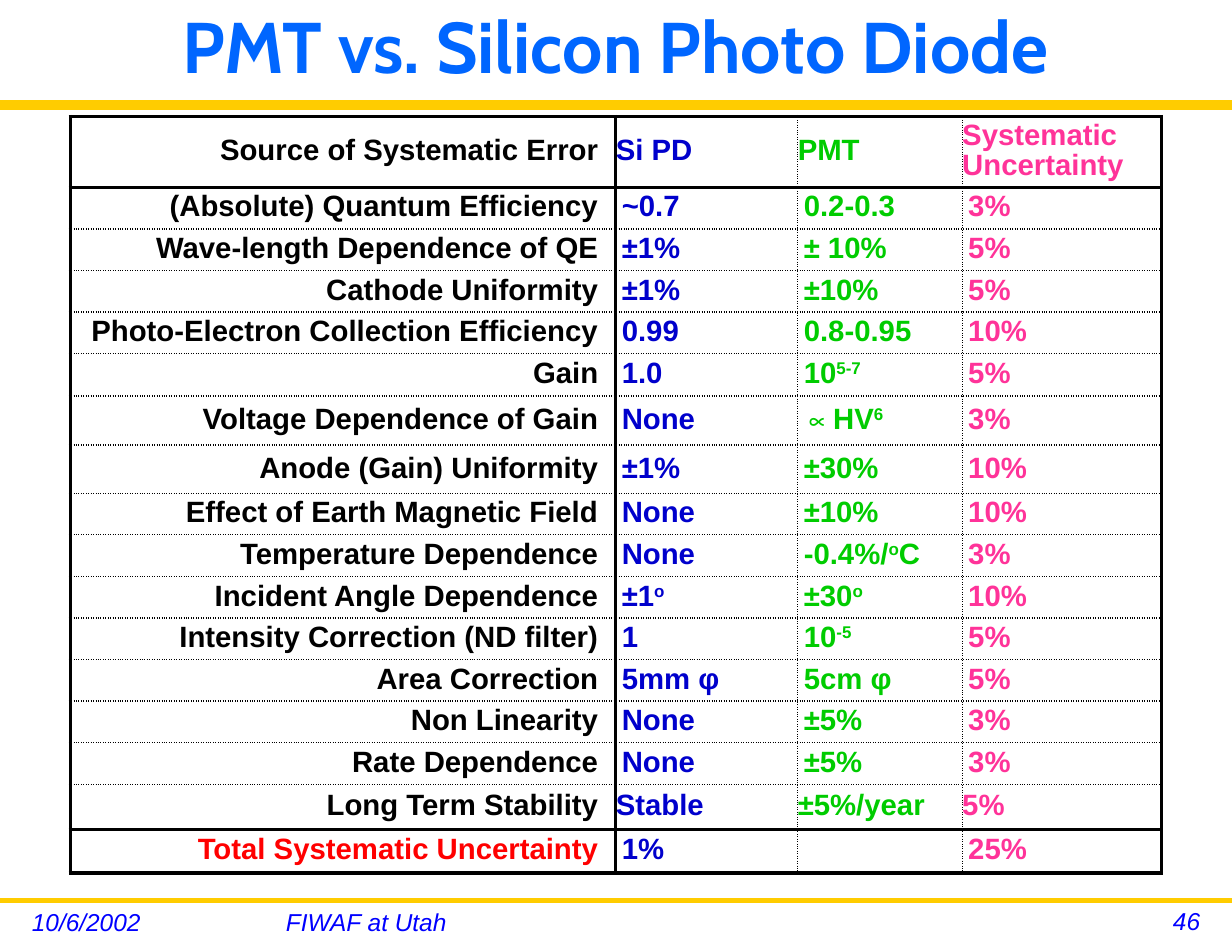
import pptx
import pptx.util
import pptx.dml.color
import pptx.enum.shapes
import pptx.enum.text
import lxml.etree
import pptx.oxml.ns

Cm = pptx.util.Cm
Pt = pptx.util.Pt
ALIGN = pptx.enum.text.PP_ALIGN
ANCHOR = pptx.enum.text.MSO_ANCHOR
qn = pptx.oxml.ns.qn

COLORS = {
    "gold": "FFCC00", "title": "0066FF", "footer": "0000FF", "black": "000000",
    "diode": "0000CC", "pmt": "00CC00", "pink": "FF3399", "red": "FF0000",
}


def write_text(para, text, color, align, spacing, font):
    para.alignment = align
    para.line_spacing = spacing
    for index, part in enumerate(text.split("^")):
        if not part:
            continue
        span = para.add_run()
        span.text = part
        for name, value in font.items():
            setattr(span.font, name, value)
        span.font.color.rgb = pptx.dml.color.RGBColor.from_string(COLORS[color])
        if index % 2:
            span._r.get_or_add_rPr().set("baseline", "30000")


def draw_border(cell, side, solid):
    line = lxml.etree.SubElement(cell._tc.get_or_add_tcPr(), qn(f"a:ln{side}"))
    line.set("w", str(Pt(2.25 if solid else 1)))
    fill = lxml.etree.SubElement(line, qn("a:solidFill"))
    lxml.etree.SubElement(fill, qn("a:srgbClr")).set("val", COLORS["black"])
    dash = lxml.etree.SubElement(line, qn("a:prstDash"))
    dash.set("val", "solid" if solid else "sysDot")


deck = pptx.Presentation()
deck.slide_width = Cm(26.67)
deck.slide_height = Cm(20.32)
page = deck.slides.add_slide(deck.slide_layouts[6])

for top, weight in [(2.28, 6), (19.48, 3)]:
    rule = page.shapes.add_connector(
        pptx.enum.shapes.MSO_CONNECTOR.STRAIGHT, 0, Cm(top), deck.slide_width, Cm(top))
    rule.line.color.rgb = pptx.dml.color.RGBColor.from_string(COLORS["gold"])
    rule.line.width = Pt(weight)
    lxml.etree.SubElement(rule._element.spPr, qn("a:effectLst"))

title_font = {"name": "Cabin", "size": Pt(44), "bold": True}
footer_font = {"name": "Arial", "size": Pt(15), "italic": True}
labels = [
    ("PMT vs. Silicon Photo Diode", 0.41, 0, 25.83, 2.29, "title",
     ALIGN.CENTER, ANCHOR.MIDDLE, 0.8, title_font),
    ("10/6/2002", 0.43, 19.5, 5.28, 0.82, "footer", ALIGN.LEFT, ANCHOR.TOP, 1.0, footer_font),
    ("FIWAF at Utah", 5.93, 19.5, 15.44, 0.82, "footer", ALIGN.LEFT, ANCHOR.TOP, 1.0, footer_font),
    ("46", 21.59, 19.48, 4.65, 0.84, "footer", ALIGN.RIGHT, ANCHOR.TOP, 1.0, footer_font),
]
for text, left, top, width, height, color, align, anchor, spacing, font in labels:
    box = page.shapes.add_textbox(Cm(left), Cm(top), Cm(width), Cm(height))
    frame_format = {
        "word_wrap": True, "vertical_anchor": anchor,
        "margin_left": Cm(0.26), "margin_right": Cm(0.26),
        "margin_top": Cm(0.13), "margin_bottom": Cm(0.13),
    }
    for name, value in frame_format.items():
        setattr(box.text_frame, name, value)
    write_text(box.text_frame.paragraphs[0], text, color, align, spacing, font)

rows = [
    ("Source of Systematic Error", "Si PD", "PMT", "Systematic Uncertainty"),
    ("(Absolute) Quantum Efficiency", "~0.7", "0.2-0.3", "3%"),
    ("Wave-length Dependence of QE", "±1%", "± 10%", "5%"),
    ("Cathode Uniformity", "±1%", "±10%", "5%"),
    ("Photo-Electron Collection Efficiency", "0.99", "0.8-0.95", "10%"),
    ("Gain", "1.0", "10^5-7", "5%"),
    ("Voltage Dependence of Gain", "None", "∝HV^6", "3%"),
    ("Anode (Gain) Uniformity", "±1%", "±30%", "10%"),
    ("Effect of Earth Magnetic Field", "None", "±10%", "10%"),
    ("Temperature Dependence", "None", "-0.4%/^o^C", "3%"),
    ("Incident Angle Dependence", "±1^o", "±30^o", "10%"),
    ("Intensity Correction (ND filter)", "1", "10^-5", "5%"),
    ("Area Correction", "5mm φ", "5cm φ", "5%"),
    ("Non Linearity", "None", "±5%", "3%"),
    ("Rate Dependence", "None", "±5%", "3%"),
    ("Long Term Stability", "Stable", "±5%/year", "5%"),
    ("Total Systematic Uncertainty", "1%", "", "25%"),
]
widths = [11.81, 3.94, 3.56, 4.32]
special_heights = {0: 1.53, 5: 0.92, 6: 1.06, 7: 1.04, 15: 0.97, 16: 0.95}
heights = [special_heights.get(index, 0.9) for index in range(len(rows))]
column_colors = ["black", "diode", "pmt", "pink"]
cell_font = {"name": "Arial", "size": Pt(18), "bold": True}
total_row = len(rows) - 1
flush_rows = (0, total_row - 1)
solid_rows = (0, 1, total_row, total_row + 1)
solid_columns = (0, 1, len(widths))

table = page.shapes.add_table(
    len(rows), len(widths), Cm(1.52), Cm(2.52), Cm(sum(widths)), Cm(sum(heights))).table
table.first_row = False
table.horz_banding = False
for column, width in zip(table.columns, widths):
    column.width = Cm(width)
for row, height in zip(table.rows, heights):
    row.height = Cm(height)

for r, texts in enumerate(rows):
    for c, text in enumerate(texts):
        cell = table.cell(r, c)
        margin = 0.38 if c == 0 else 0 if r in flush_rows else 0.13
        cell_format = {
            "vertical_anchor": ANCHOR.MIDDLE,
            "margin_left": Cm(margin), "margin_right": Cm(margin),
            "margin_top": Cm(0.08), "margin_bottom": Cm(0.08),
        }
        for name, value in cell_format.items():
            setattr(cell, name, value)
        draw_border(cell, "L", c in solid_columns)
        draw_border(cell, "R", c + 1 in solid_columns)
        draw_border(cell, "T", r in solid_rows)
        draw_border(cell, "B", r + 1 in solid_rows)
        cell.fill.background()
        color = "red" if (r, c) == (total_row, 0) else column_colors[c]
        align = ALIGN.RIGHT if c == 0 else ALIGN.LEFT
        write_text(cell.text_frame.paragraphs[0], text, color, align, 0.9, cell_font)

deck.save("out.pptx")
